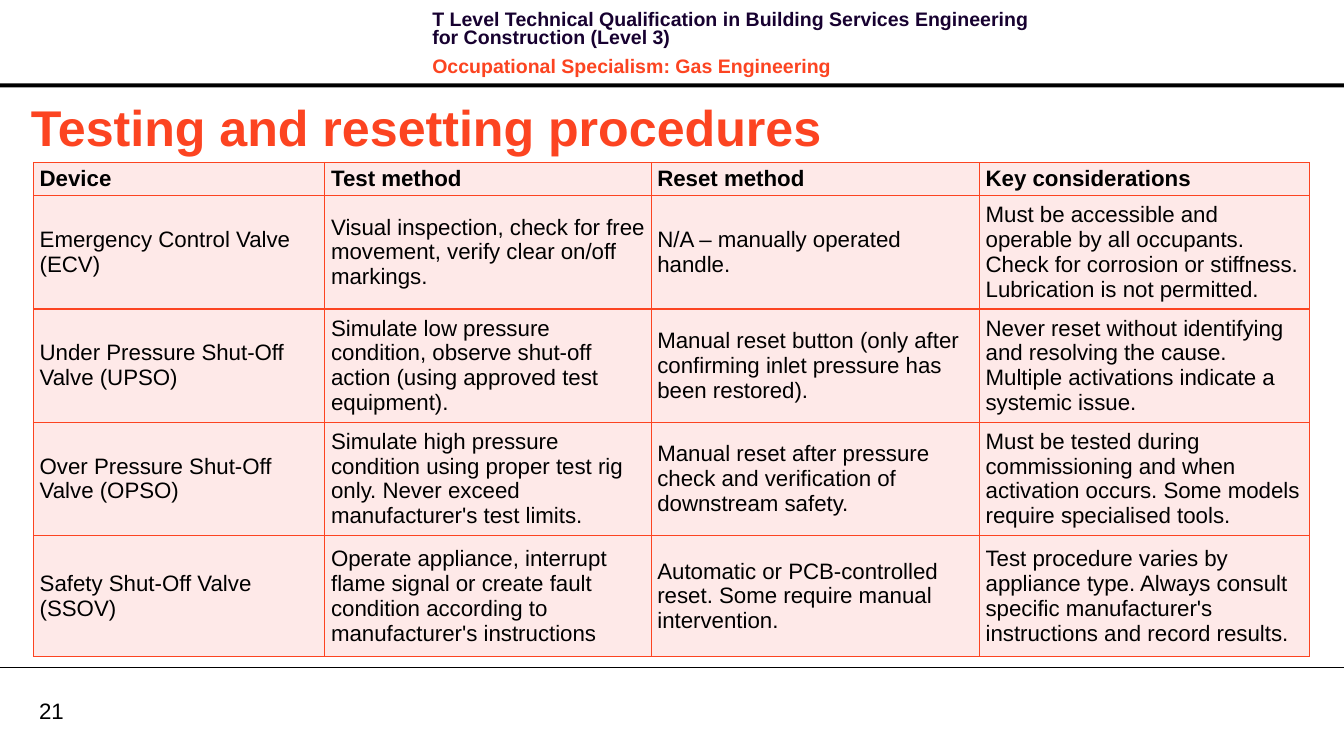
from lxml import etree
from pptx import Presentation
from pptx.dml.color import RGBColor
from pptx.enum import shapes, text
from pptx.oxml import ns
from pptx.util import Pt

BLACK = RGBColor(0x00, 0x00, 0x00)
NAVY = RGBColor(0x17, 0x01, 0x30)
ORANGE = RGBColor(0xFC, 0x44, 0x21)
PINK = RGBColor(0xFE, 0xE9, 0xE8)
FONT = "Arial"
SLIDE_WIDTH, SLIDE_HEIGHT = 964, 538.6

COLUMN_WIDTHS = [209, 234, 235.5, 237]
ROW_HEIGHTS = [18, 73.5, 73.5, 73.5, 87]
PROCEDURES = [
    ["Device", "Test method", "Reset method", "Key considerations"],
    ["Emergency Control Valve (ECV)",
     "Visual inspection, check for free movement, verify clear on/off markings.",
     "N/A – manually operated handle.",
     "Must be accessible and operable by all occupants. Check for corrosion or "
     "stiffness. Lubrication is not permitted."],
    ["Under Pressure Shut-Off Valve (UPSO)",
     "Simulate low pressure condition, observe shut-off action (using approved "
     "test equipment).",
     "Manual reset button (only after confirming inlet pressure has been restored).",
     "Never reset without identifying and resolving the cause. Multiple "
     "activations indicate a systemic issue."],
    ["Over Pressure Shut-Off Valve (OPSO)",
     "Simulate high pressure condition using proper test rig only. Never exceed "
     "manufacturer's test limits.",
     "Manual reset after pressure check and verification of downstream safety.",
     "Must be tested during commissioning and when activation occurs. Some models "
     "require specialised tools."],
    ["Safety Shut-Off Valve (SSOV)",
     "Operate appliance, interrupt flame signal or create fault condition "
     "according to manufacturer's instructions",
     "Automatic or PCB-controlled reset. Some require manual intervention.",
     "Test procedure varies by appliance type. Always consult specific "
     "manufacturer's instructions and record results."],
]


def format_paragraph(paragraph, size, color, bold=False):
    paragraph.alignment = text.PP_ALIGN.LEFT
    font = paragraph.font
    font.name, font.size, font.bold = FONT, Pt(size), bold
    font.color.rgb = color


def set_margins(target, horizontal, vertical):
    target.margin_left = target.margin_right = Pt(horizontal)
    target.margin_top = target.margin_bottom = Pt(vertical)


def add_text_box(slide, left, top, width, height):
    frame = slide.shapes.add_textbox(Pt(left), Pt(top), Pt(width), Pt(height)).text_frame
    frame.word_wrap = True
    return frame


def add_header(slide):
    frame = add_text_box(slide, 303, 5, 458.6, 46)
    frame.text = ("T Level Technical Qualification in Building Services Engineering "
                  "for Construction (Level 3)\nOccupational Specialism: Gas Engineering")
    for paragraph, color in zip(frame.paragraphs, (NAVY, ORANGE)):
        paragraph.line_spacing = Pt(13.1)
        paragraph.space_after = Pt(4)
        format_paragraph(paragraph, 14, color, bold=True)
    frame.paragraphs[1].space_before = Pt(4)


def add_header_bar(slide):
    bar = slide.shapes.add_shape(shapes.MSO_SHAPE.RECTANGLE,
                                 0, Pt(59.8), Pt(SLIDE_WIDTH), Pt(2.9))
    bar.shadow.inherit = False
    bar.fill.solid()
    bar.fill.fore_color.rgb = BLACK
    bar.line.fill.background()


def add_footer(slide):
    rule = slide.shapes.add_connector(shapes.MSO_CONNECTOR.STRAIGHT,
                                      0, Pt(478.8), Pt(SLIDE_WIDTH), Pt(478.8))
    rule.line.color.rgb = BLACK
    rule.line.width = Pt(0.75)
    etree.SubElement(rule._element.spPr, ns.qn("a:effectLst"))

    frame = add_text_box(slide, 28, 499.7, 46, 19.4)
    set_margins(frame, 0, 0)
    frame.vertical_anchor = text.MSO_ANCHOR.MIDDLE
    frame.text = "21"
    format_paragraph(frame.paragraphs[0], 16, BLACK)


def set_title(slide):
    title = slide.shapes.title
    title.left, title.top, title.width, title.height = Pt(15), Pt(65.5), Pt(916), Pt(51)
    frame = title.text_frame
    frame.auto_size = text.MSO_AUTO_SIZE.NONE
    frame.vertical_anchor = text.MSO_ANCHOR.MIDDLE
    frame.text = "Testing and resetting procedures"
    format_paragraph(frame.paragraphs[0], 36, ORANGE, bold=True)


def add_borders(cell):
    """Outline a cell; call before filling it, as borders come first in its XML."""
    properties = cell._tc.get_or_add_tcPr()
    for side in ("lnL", "lnR", "lnT", "lnB"):
        line = etree.SubElement(properties, ns.qn(f"a:{side}"), w=str(Pt(1)))
        fill = etree.SubElement(line, ns.qn("a:solidFill"))
        etree.SubElement(fill, ns.qn("a:srgbClr"), val=str(ORANGE))


def fill_cell(cell, content, bold):
    add_borders(cell)
    cell.fill.solid()
    cell.fill.fore_color.rgb = PINK
    set_margins(cell, 4.5, 2.25)
    cell.vertical_anchor = text.MSO_ANCHOR.MIDDLE
    cell.text = content
    format_paragraph(cell.text_frame.paragraphs[0], 16, BLACK, bold)


def add_procedure_table(slide):
    table = slide.shapes.add_table(
        len(ROW_HEIGHTS), len(COLUMN_WIDTHS), Pt(24), Pt(116.6),
        Pt(sum(COLUMN_WIDTHS)), Pt(sum(ROW_HEIGHTS))).table
    table.first_row = table.horz_banding = False
    for column, width in zip(table.columns, COLUMN_WIDTHS):
        column.width = Pt(width)
    for index, (row, height) in enumerate(zip(table.rows, ROW_HEIGHTS)):
        row.height = Pt(height)
        for cell, content in zip(row.cells, PROCEDURES[index]):
            fill_cell(cell, content, bold=index == 0)


def main():
    presentation = Presentation()
    presentation.slide_width = Pt(SLIDE_WIDTH)
    presentation.slide_height = Pt(SLIDE_HEIGHT)
    slide = presentation.slides.add_slide(presentation.slide_layouts.get_by_name("Title Only"))
    add_header_bar(slide)
    add_footer(slide)
    add_header(slide)
    set_title(slide)
    add_procedure_table(slide)
    presentation.save("out.pptx")


if __name__ == "__main__":
    main()
